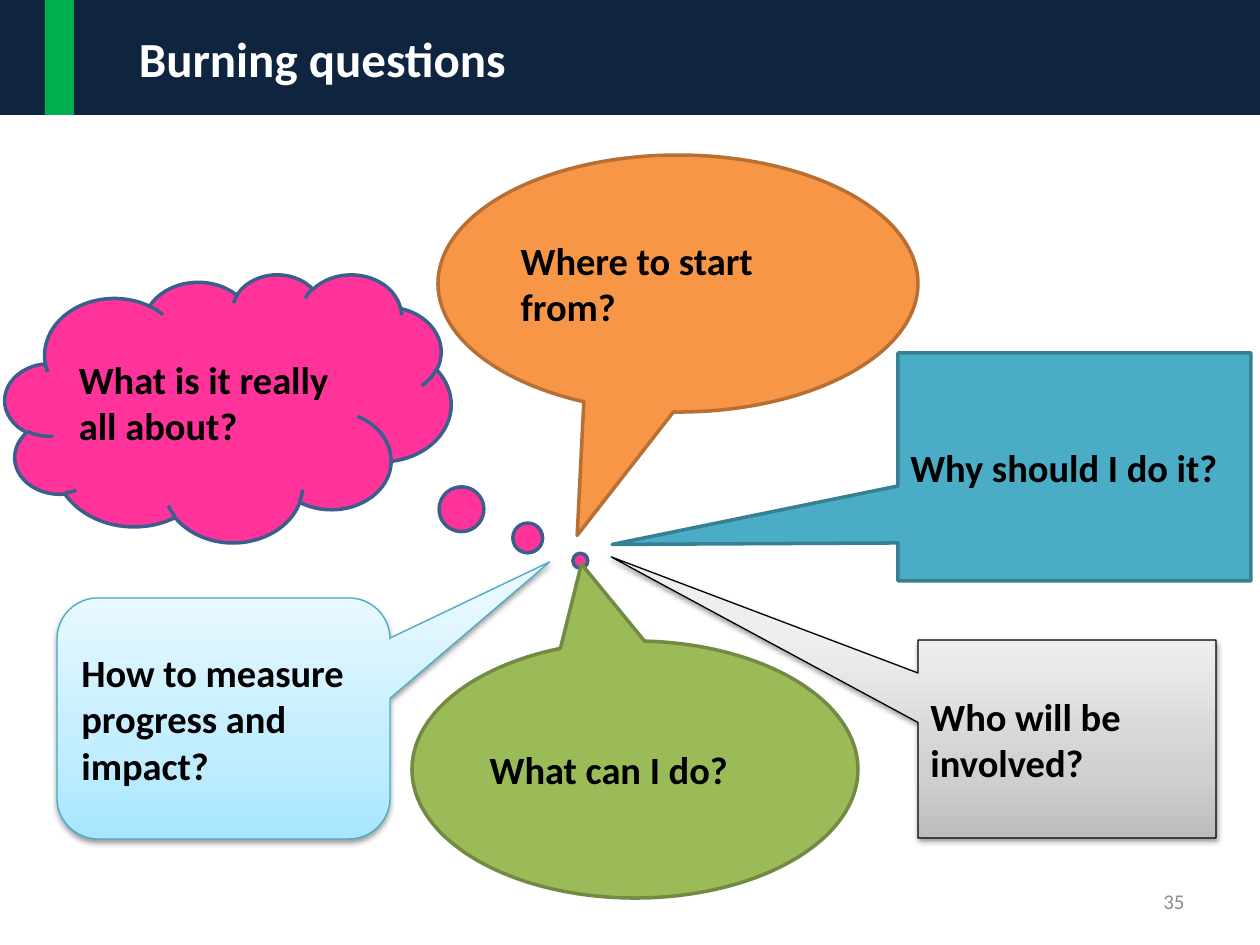
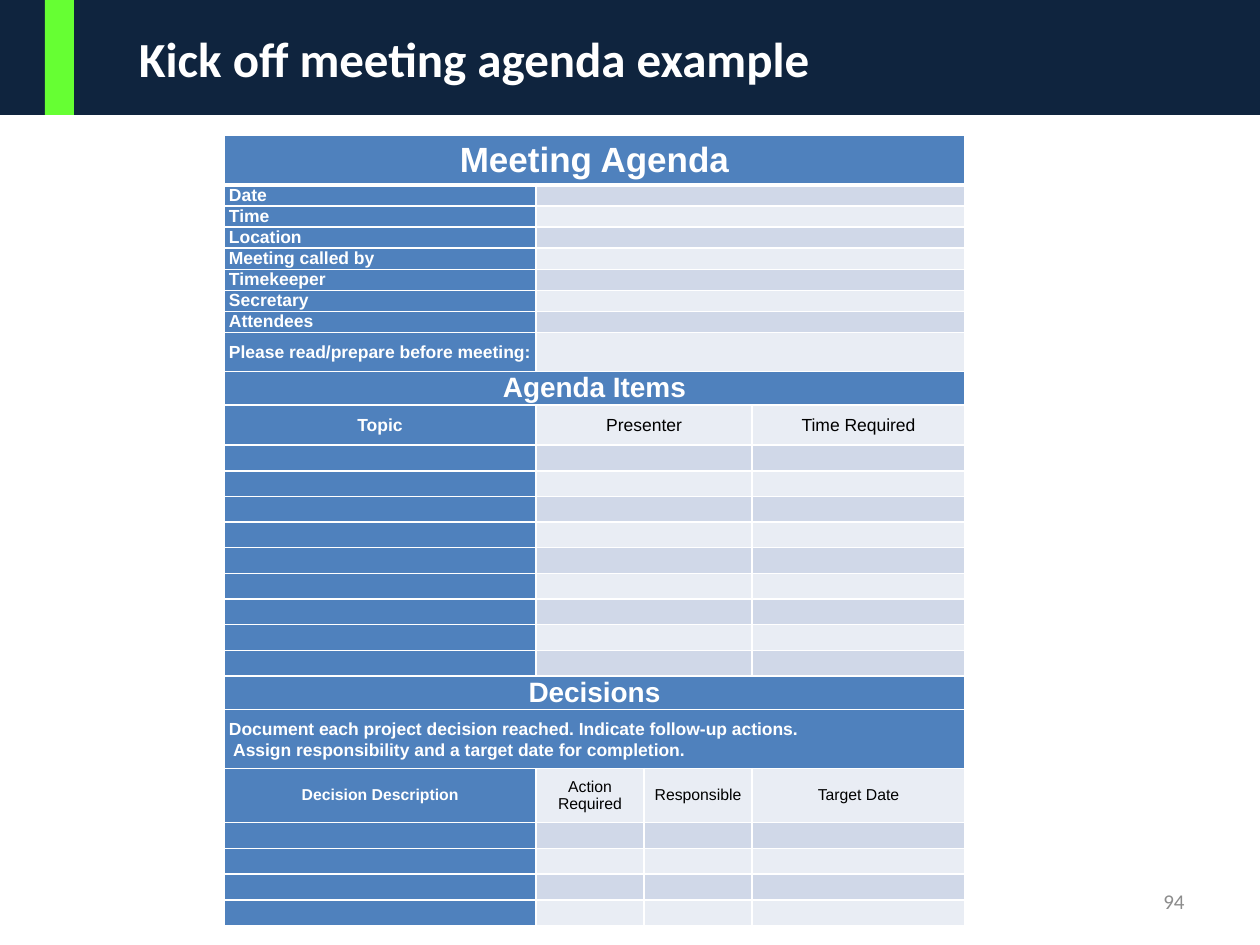
from copy import deepcopy
from dataclasses import dataclass

from lxml.etree import SubElement
from pptx import Presentation
from pptx.dml.color import RGBColor
from pptx.enum.shapes import MSO_SHAPE as Shape
from pptx.enum.text import MSO_ANCHOR as Anchor, PP_ALIGN as Align
from pptx.oxml.ns import qn
from pptx.util import Emu, Pt


@dataclass(frozen=True)
class Theme:
    """Colours, fonts and type sizes of the deck."""
    navy: str = "0F243E"
    white: str = "FFFFFF"
    black: str = "000000"
    grey: str = "8C8C8C"
    green: str = "00B050"
    lime: str = "66FF33"
    table_blue: str = "4F81BD"
    bands: tuple = ("D0D8E8", "E9EDF4")
    body_font: str = "Calibri"
    table_font: str = "Arial"
    title_size: int = 28
    callout_size: int = 22
    number_size: int = 12
    table_title_size: int = 20
    section_size: int = 16
    label_size: int = 10
    column_size: int = 9
    empty_size: int = 6


THEME = Theme()
SLIDE = (1260, 945)
HEADER = (0, 0, 1260, 115)
NUMBER = (903, 876, 294, 50)
TABLE = (224, 135)
COLUMNS = (312, 108, 108, 213)
ROW_GROUPS = ((1, 50), (7, 147), (1, 39), (1, 33), (1, 40), (9, 231),
              (1, 33), (1, 59), (1, 54), (4, 103))
FIELDS = ("Date", "Time", "Location", "Meeting called by", "Timekeeper", "Secretary",
          "Attendees", "Please read/prepare before meeting:")
CALLOUTS = (
    ("Why should I do it?", Shape.RECTANGULAR_CALLOUT, (898, 353, 353, 228),
     (-1.31, 0.34), "4BACC6", "377F92"),
    ("How to measure progress and impact?", Shape.ROUNDED_RECTANGULAR_CALLOUT,
     (57, 598, 333, 241), (0.98, -0.65, 0.17), ("A7E6FF", "C1EDFF", "E7F8FF"), "46AAC5"),
    ("Where to start from?", Shape.OVAL_CALLOUT, (438, 155, 480, 257),
     (-0.21, 0.98), "F79646", "B76F34"),
    ("What is it really all about?", Shape.CLOUD_CALLOUT, (5, 274, 446, 268),
     (0.79, 0.57), "FF3399", "3A5F8C"),
    ("What can I do?", Shape.OVAL_CALLOUT, (412, 641, 446, 257),
     (-0.12, -0.8), "9BBB59", "738A42"),
    ("Who will be involved?", Shape.RECTANGULAR_CALLOUT, (918, 640, 298, 198),
     (-1.53, -0.92), ("BDBDBD", "D1D1D1", "EEEEEE"), "000000"),
)


def px(length):
    """Turn a length in px into EMU."""
    return Emu(round(length * 914400 / 126))


def rgb(colour):
    """Turn a hex string into a colour."""
    return RGBColor.from_string(colour)


def write(frame, text, size, colour, bold=True, align=Align.LEFT,
          font=THEME.body_font, spacing=None):
    """Fill a text frame, one paragraph for each line of text."""
    frame.word_wrap = True
    frame.vertical_anchor = Anchor.MIDDLE
    for index, line in enumerate(text.split("\n")):
        para = frame.add_paragraph() if index else frame.paragraphs[0]
        para.text = line
        para.alignment = align
        para.line_spacing = spacing
        para.font.size = Pt(size)
        para.font.name = font
        para.font.bold = bold
        para.font.color.rgb = rgb(colour)


def add_block(shapes, box, fill, kind=Shape.RECTANGLE):
    """Add a flat shape without line or shadow."""
    block = shapes.add_shape(kind, *map(px, box))
    block.shadow.inherit = False
    block.fill.solid()
    block.fill.fore_color.rgb = rgb(fill)
    block.line.fill.background()
    return block


def add_header(page, box, title, accent):
    """Place the title band with its accent bar."""
    left, top, width, height = box
    group = page.shapes.add_group_shape()
    band = add_block(group.shapes, box, THEME.navy)
    band.text_frame.margin_left = px(139)
    write(band.text_frame, title, THEME.title_size, THEME.white)
    add_block(group.shapes, (left + 45, top, 29, height), accent)


def add_number(page, box, number):
    """Place the slide number."""
    label = page.shapes.add_textbox(*map(px, box))
    write(label.text_frame, number, THEME.number_size, THEME.grey, False, Align.RIGHT)


def shade(shape, colours):
    """Give a shape an upward three-stop gradient and a soft shadow."""
    shape.fill.gradient()
    shape.fill.gradient_angle = 90
    stop_list = shape.element.spPr.find(qn("a:gradFill")).find(qn("a:gsLst"))
    stop_list.append(deepcopy(stop_list[0]))
    for stop, colour, position in zip(shape.fill.gradient_stops, colours, (0, 0.35, 1)):
        stop.color.rgb = rgb(colour)
        stop.position = position
    effects = shape.element.spPr.find(qn("a:effectLst"))
    shadow = SubElement(effects, qn("a:outerShdw"), blurRad="40000", dist="20000",
                        dir="5400000", rotWithShape="0")
    tint = SubElement(shadow, qn("a:srgbClr"), val=THEME.black)
    SubElement(tint, qn("a:alpha"), val="38000")


def add_callout(page, text, kind, box, pointer, fill, line):
    """Place one question bubble, shaded when it has several colours."""
    shaded = isinstance(fill, tuple)
    bubble = add_block(page.shapes, box, fill[0] if shaded else fill, kind)
    for index, value in enumerate(pointer):
        bubble.adjustments[index] = value
    if shaded:
        shade(bubble, fill)
    bubble.line.color.rgb = rgb(line)
    bubble.line.width = Pt(0.75 if shaded else 2)
    write(bubble.text_frame, text, THEME.callout_size, THEME.black)


def style_cell(cell, fill, bottom):
    """Give a cell its fill, white borders and margins."""
    cell.margin_left = cell.margin_right = px(5)
    cell.margin_top = cell.margin_bottom = 0
    props = cell._tc.get_or_add_tcPr()
    for side, width in (("L", 1), ("R", 1), ("T", 1), ("B", bottom)):
        edge = SubElement(props, qn(f"a:ln{side}"), w=str(Pt(width)))
        paint = SubElement(edge, qn("a:solidFill"))
        SubElement(paint, qn("a:srgbClr"), val=THEME.white)
    cell.fill.solid()
    cell.fill.fore_color.rgb = rgb(fill)
    SubElement(cell.text_frame.paragraphs[0]._p, qn("a:endParaRPr"),
               sz=str(THEME.empty_size * 100))


def fill_cell(table, row, column, text, size, align=Align.CENTER):
    """Write one table cell, bold white in the first column."""
    first = column == 0
    cell = table.cell(row, column)
    cell.vertical_anchor = Anchor.MIDDLE
    write(cell.text_frame, text, size, THEME.white if first else THEME.black,
          first, align, THEME.table_font, 1.07 if "\n" in text else None)


def add_agenda(page, corner):
    """Place the meeting agenda table."""
    heights = [total / count for count, total in ROW_GROUPS for _ in range(count)]
    frame = page.shapes.add_table(len(heights), len(COLUMNS), *map(px, corner),
                                  px(sum(COLUMNS)), px(sum(heights)))
    table = frame.table
    table.first_row = table.horz_banding = False
    for column, width in zip(table.columns, COLUMNS):
        column.width = px(width)
    full_rows = (0, 9, 20, 21)
    for index, height in enumerate(heights):
        table.rows[index].height = px(height)
        band = THEME.bands[(index + 1) % 2]
        if index in (10, 22):
            band = THEME.bands[1]
        for column in range(len(COLUMNS)):
            blue = column == 0 or index in full_rows
            style_cell(table.cell(index, column), THEME.table_blue if blue else band,
                       1 if index else 3)
        if index in full_rows:
            table.cell(index, 0).merge(table.cell(index, 3))
        elif index < 20:
            table.cell(index, 1).merge(table.cell(index, 3 if index < 9 else 2))

    fill_cell(table, 0, 0, "Meeting Agenda", THEME.table_title_size)
    for index, field in enumerate(FIELDS, 1):
        fill_cell(table, index, 0, field, THEME.label_size, Align.LEFT)
    fill_cell(table, 9, 0, "Agenda Items", THEME.section_size)
    for column, text in ((0, "Topic"), (1, "Presenter"), (3, "Time Required")):
        fill_cell(table, 10, column, text, THEME.label_size)
    fill_cell(table, 20, 0, "Decisions", THEME.section_size)
    fill_cell(table, 21, 0,
              "Document each project decision reached. Indicate follow-up actions.\n"
              " Assign responsibility and a target date for completion.",
              THEME.label_size, Align.LEFT)
    headings = ("Decision Description", "Action Required", "Responsible", "Target Date")
    for column, text in enumerate(headings):
        fill_cell(table, 22, column, text, THEME.column_size)


def add_page(deck, title, accent, number):
    """Add a blank slide with the shared header and number."""
    page = deck.slides.add_slide(deck.slide_layouts[6])
    add_header(page, HEADER, title, accent)
    add_number(page, NUMBER, number)
    return page


def main():
    """Build and save the deck."""
    deck = Presentation()
    deck.slide_width, deck.slide_height = map(px, SLIDE)
    questions = add_page(deck, "Burning questions", THEME.green, "35")
    for callout in CALLOUTS:
        add_callout(questions, *callout)
    agenda = add_page(deck, "Kick off meeting agenda example", THEME.lime, "94")
    add_agenda(agenda, TABLE)
    deck.save("out.pptx")


if __name__ == "__main__":
    main()
